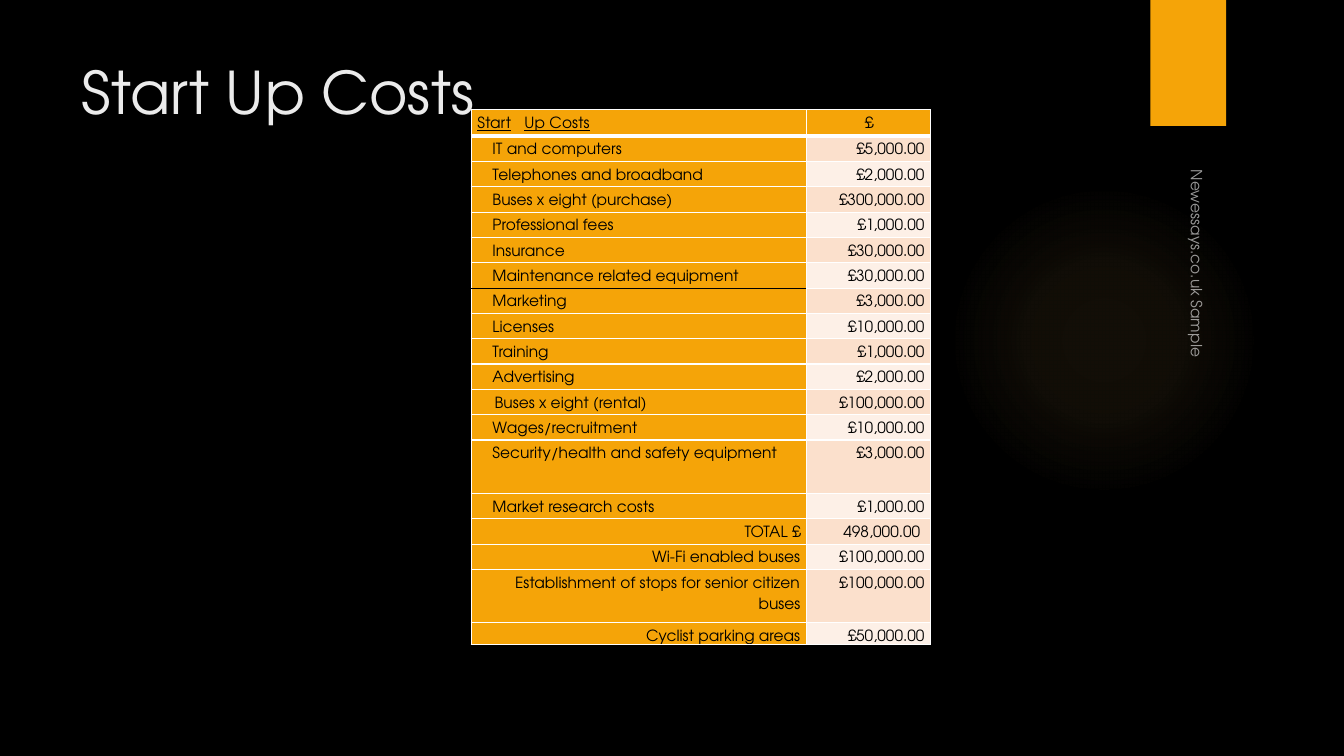
import pptx
import pptx.dml.color
import pptx.enum.shapes
import pptx.enum.text
import pptx.oxml
import pptx.oxml.ns
import pptx.util
from lxml import etree

Pt = pptx.util.Pt
RGBColor = pptx.dml.color.RGBColor
ALIGN = pptx.enum.text.PP_ALIGN
ANCHOR = pptx.enum.text.MSO_ANCHOR
SHAPE = pptx.enum.shapes.MSO_SHAPE
qn = pptx.oxml.ns.qn

# Content
TITLE = "Start Up Costs"
FOOTER = "Newessays.co.uk Sample"
HEADER = ("Start\tUp Costs", "£")
ITEMS = [
    ("IT and computers", "£5,000.00"),
    ("Telephones and broadband", "£2,000.00"),
    ("Buses x eight (purchase)", "£300,000.00"),
    ("Professional fees", "£1,000.00"),
    ("Insurance", "£30,000.00"),
    ("Maintenance related equipment", "£30,000.00"),
    ("Marketing", "£3,000.00"),
    ("Licenses", "£10,000.00"),
    ("Training", "£1,000.00"),
    ("Advertising", "£2,000.00"),
    ("Buses x eight (rental)", "£100,000.00"),
    ("Wages/recruitment", "£10,000.00"),
    ("Security/health and safety equipment", "£3,000.00"),
    ("Market research costs", "£1,000.00"),
]
TOTALS = [
    ("TOTAL £", "498,000.00"),
    ("Wi-Fi enabled buses", "£100,000.00"),
    ("Establishment of stops for senior citizen buses", "£100,000.00"),
    ("Cyclist parking areas", "£50,000.00"),
]

# Look
FONT = "TeX Gyre Adventor"
BLACK = RGBColor(0x00, 0x00, 0x00)
WHITE = RGBColor(0xFF, 0xFF, 0xFF)
TITLE_GREY = RGBColor(0xEB, 0xEB, 0xEB)
ORANGE = RGBColor(0xF5, 0xA4, 0x08)
GLOW = RGBColor(0xFA, 0xC9, 0x6A)
BANDS = (RGBColor(0xFD, 0xF0, 0xE7), RGBColor(0xFB, 0xE0, 0xCC))

COL_WIDTHS = (239.8, 88.6)
ROW_HEIGHT = 18.1
ROW_HEIGHTS = {0: 19, 13: 38.2, 17: 38.2, 18: 12.2}
ITEM_INDENT, RENTAL_INDENT = 10.8, 12.3
RULE_ROW = 6  # black rule below this row
TAB_STOP = 33.6


def add_run(p, text, size, color):
    r = p.add_run()
    r.text = text
    r.font.name = FONT
    r.font.size = Pt(size)
    r.font.color.rgb = color
    return r


def add_alpha(color_element, percent):
    etree.SubElement(color_element, qn("a:alpha"), val=str(percent * 1000))


def set_borders(cell, top, bottom):
    tcPr = cell._tc.get_or_add_tcPr()
    sides = (("L", WHITE, 1), ("R", WHITE, 1), ("T", *top), ("B", *bottom))
    for side, color, width in sides:
        ln = etree.SubElement(tcPr, qn("a:ln" + side), w=str(Pt(width)))
        fill = etree.SubElement(ln, qn("a:solidFill"))
        etree.SubElement(fill, qn("a:srgbClr"), val=str(color))


prs = pptx.Presentation()
prs.slide_width, prs.slide_height = Pt(960), Pt(540)
s = prs.slides.add_slide(prs.slide_layouts[5])
s.background.fill.solid()
s.background.fill.fore_color.rgb = BLACK

# Soft round glow
sp = s.shapes.add_shape(SHAPE.OVAL, Pt(677.5), Pt(131.8), Pt(221.8), Pt(221.8))
sp.shadow.inherit = False
sp.line.fill.background()
grad = pptx.oxml.parse_xml(
    '<a:gradFill xmlns:a="http://schemas.openxmlformats.org/drawingml/2006/main">'
    '<a:gsLst/><a:path path="circle">'
    '<a:fillToRect l="50000" t="50000" r="50000" b="50000"/></a:path></a:gradFill>')
for pos, alpha in ((0, 7), (36, 6), (69, 0)):
    gs = etree.SubElement(grad[0], qn("a:gs"), pos=str(pos * 1000))
    add_alpha(etree.SubElement(gs, qn("a:srgbClr"), val=str(GLOW)), alpha)
sp._element.spPr.find(qn("a:prstGeom")).addnext(grad)

# Orange tab at the top
sp = s.shapes.add_shape(SHAPE.RECTANGLE, Pt(821.8), Pt(0), Pt(54), Pt(90))
sp.shadow.inherit = False
sp.fill.solid()
sp.fill.fore_color.rgb = ORANGE
sp.line.fill.background()

# Title
title = s.shapes.title
title.left, title.top, title.width, title.height = Pt(51), Pt(36), Pt(741), Pt(110)
tf = title.text_frame
tf.auto_size = pptx.enum.text.MSO_AUTO_SIZE.NONE
tf.vertical_anchor = ANCHOR.TOP
tf.paragraphs[0].alignment = ALIGN.LEFT
add_run(tf.paragraphs[0], TITLE, 42, TITLE_GREY)

# Cost table
rows = [HEADER] + ITEMS + TOTALS
heights = [ROW_HEIGHTS.get(i, ROW_HEIGHT) for i in range(len(rows))]
table = s.shapes.add_table(len(rows), 2, Pt(336.5), Pt(78.3),
                           Pt(sum(COL_WIDTHS)), Pt(sum(heights))).table
table.first_row = table.horz_banding = False
for column, width in zip(table.columns, COL_WIDTHS):
    column.width = Pt(width)

for i, (texts, height) in enumerate(zip(rows, heights)):
    table.rows[i].height = Pt(height)
    is_item = 1 <= i <= len(ITEMS)
    for j, text in enumerate(texts):
        cell = table.cell(i, j)
        cell.margin_left = cell.margin_right = Pt(4.5)
        cell.margin_top = cell.margin_bottom = 0

        # Borders first, then the fill
        top = bottom = (WHITE, 1)
        if i == 0:
            bottom = (WHITE, 3)
        elif i == 1:
            top = (WHITE, 3)
        if j == 0 and i == RULE_ROW:
            bottom = (BLACK, 1)
        elif j == 0 and i == RULE_ROW + 1:
            top = (BLACK, 1)
        set_borders(cell, top, bottom)
        cell.fill.solid()
        cell.fill.fore_color.rgb = ORANGE if i == 0 or j == 0 else BANDS[i % 2]

        p = cell.text_frame.paragraphs[0]
        p.line_spacing = 1.5
        pPr = p._p.get_or_add_pPr()
        if i == 0:
            p.alignment = (ALIGN.LEFT, ALIGN.CENTER)[j]
        else:
            p.alignment = ALIGN.LEFT if is_item and j == 0 else ALIGN.RIGHT
        if is_item and j == 0:
            indent = RENTAL_INDENT if "rental" in text else ITEM_INDENT
            pPr.set("marL", "0")
            pPr.set("indent", str(Pt(indent)))
        if "\t" in text:
            tabs = etree.SubElement(pPr, qn("a:tabLst"))
            etree.SubElement(tabs, qn("a:tab"), pos=str(Pt(TAB_STOP)), algn="l")
        if text == TOTALS[0][1]:
            cell.margin_right = Pt(7.5)
        r = add_run(p, text, 11, BLACK)
        r.font.underline = i == 0 and j == 0

# Footer running down the right side
sp = s.shapes.add_textbox(Pt(704.9), Pt(254.2), Pt(303.8), Pt(23.8))
sp.rotation = 90
tf = sp.text_frame
tf.word_wrap = True
tf.vertical_anchor = ANCHOR.BOTTOM
r = add_run(tf.paragraphs[0], FOOTER, 11, WHITE)
add_alpha(r._r.rPr.find(qn("a:solidFill"))[0], 60)

prs.save("out.pptx")
